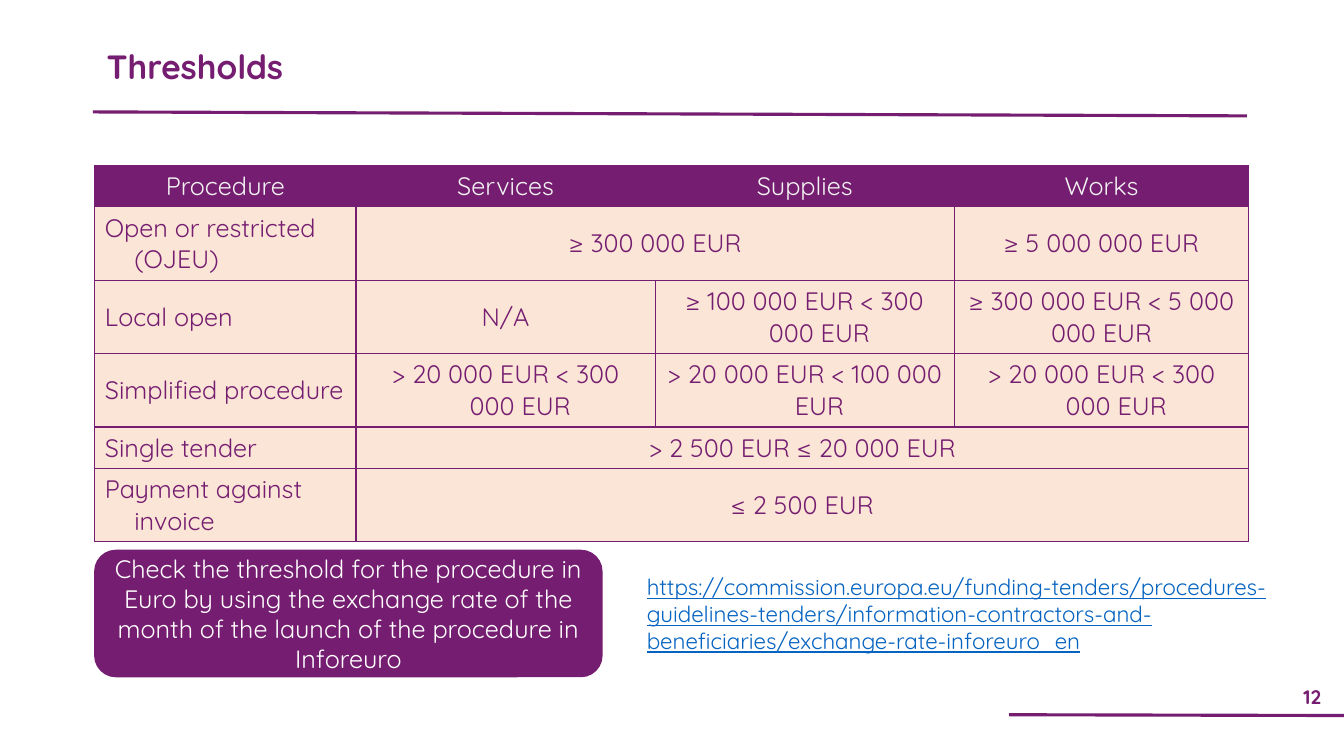
from dataclasses import dataclass

from lxml.etree import SubElement
from pptx import Presentation
from pptx.dml.color import RGBColor as RGB
from pptx.enum.shapes import MSO_CONNECTOR as Connector, MSO_SHAPE as Shape
from pptx.enum.text import MSO_ANCHOR as Anchor, PP_ALIGN as Align
from pptx.oxml.ns import qn
from pptx.util import Cm, Pt


@dataclass(frozen=True)
class Theme:
    font: str = "Quicksand"
    purple: RGB = RGB(0x75, 0x1D, 0x70)
    peach: RGB = RGB(0xFB, 0xE5, 0xD6)
    pale: RGB = RGB(0xF2, 0xF2, 0xF2)
    white: RGB = RGB(0xFF, 0xFF, 0xFF)
    link: RGB = RGB(0x05, 0x63, 0xC1)
    title: int = 24
    body: int = 18
    address: int = 16
    number: int = 14


THEME = Theme()
HANG = 0.74  # hanging indent, cm
SERVICES, SUPPLIES, WORKS = 1, 2, 3

HEADINGS = ["Procedure", "Services", "Supplies", "Works"]
# Procedure, row height, then (first column, last column, threshold, hanging)
PROCEDURES = [
    ("Open or restricted (OJEU)", 1.85, [
        (SERVICES, SUPPLIES, "≥ 300 000 EUR", True),
        (WORKS, WORKS, "≥ 5 000 000 EUR", False)]),
    ("Local open", 1.85, [
        (SERVICES, SERVICES, "N/A", True),
        (SUPPLIES, SUPPLIES, "≥ 100 000 EUR < 300 000 EUR", True),
        (WORKS, WORKS, "≥ 300 000 EUR < 5 000 000 EUR", False)]),
    ("Simplified procedure", 1.85, [
        (SERVICES, SERVICES, "> 20 000 EUR < 300 000 EUR", True),
        (SUPPLIES, SUPPLIES, "> 20 000 EUR < 100 000 EUR", True),
        (WORKS, WORKS, "> 20 000 EUR < 300 000 EUR", True)]),
    ("Single tender", 1.04, [
        (SERVICES, WORKS, "> 2 500 EUR ≤ 20 000 EUR", True)]),
    ("Payment against invoice", 1.85, [
        (SERVICES, WORKS, "≤ 2 500 EUR", True)]),
]
RATE_NOTE = ("Check the threshold for the procedure in Euro by using the exchange rate "
             "of the month of the launch of the procedure in Inforeuro")
RATE_ADDRESS = ("https://commission.europa.eu/funding-tenders/procedures-guidelines-tenders/"
                "information-contractors-and-beneficiaries/exchange-rate-inforeuro_en")


def write(frame, text, size, color, align=Align.LEFT, bold=False, hanging=False):
    frame.word_wrap = True
    paragraph = frame.paragraphs[0]
    paragraph.text = text
    paragraph.alignment = align
    if hanging:
        properties = paragraph._p.get_or_add_pPr()
        properties.set("marL", str(Cm(HANG)))
        properties.set("indent", str(-Cm(HANG)))
    font = paragraph.font
    font.name, font.size, font.bold = THEME.font, Pt(size), bold
    font.color.rgb = color
    return paragraph


def add_text(slide, box, *args, anchor=Anchor.TOP, **kwargs):
    frame = slide.shapes.add_textbox(*map(Cm, box)).text_frame
    frame.vertical_anchor = anchor
    return write(frame, *args, **kwargs)


def add_rule(slide, x1, y1, x2, y2):
    rule = slide.shapes.add_connector(Connector.STRAIGHT, *map(Cm, (x1, y1, x2, y2)))
    rule.line.color.rgb = THEME.purple
    rule.line.width = Pt(2.25)
    SubElement(rule._element.spPr, qn("a:effectLst"))


def style_cell(cell, fill):
    # Borders go in before the fill, as the schema orders them
    properties = cell._tc.get_or_add_tcPr()
    for side in ("a:lnL", "a:lnR", "a:lnT", "a:lnB"):
        border = SubElement(properties, qn(side), w=str(Pt(1)))
        color = SubElement(border, qn("a:solidFill"))
        SubElement(color, qn("a:srgbClr"), val=str(THEME.purple))
    cell.fill.solid()
    cell.fill.fore_color.rgb = fill


def add_header(slide, left, top, width):
    title = add_text(slide, (left + 0.1, top, 24.7, 1.07), "Thresholds",
                     THEME.title, THEME.purple, Align.JUSTIFY, bold=True)
    title.line_spacing = 0.8
    add_rule(slide, left, top + 1.6, left + width, top + 1.7)


def add_thresholds(slide, left, top, widths):
    heights = [1.04] + [height for _, height, _ in PROCEDURES]
    table = slide.shapes.add_table(
        len(heights), len(widths), *map(Cm, (left, top, sum(widths), sum(heights)))).table
    table.first_row = table.horz_banding = False
    for column, width in zip(table.columns, widths):
        column.width = Cm(width)
    for index, (row, height) in enumerate(zip(table.rows, heights)):
        row.height = Cm(height)
        for cell in row.cells:
            style_cell(cell, THEME.peach if index else THEME.purple)
            cell.vertical_anchor = Anchor.MIDDLE if index else Anchor.TOP

    for column, heading in enumerate(HEADINGS):
        write(table.cell(0, column).text_frame, heading, THEME.body, THEME.pale, Align.CENTER)
    for row, (procedure, _, thresholds) in enumerate(PROCEDURES, start=1):
        write(table.cell(row, 0).text_frame, procedure, THEME.body, THEME.purple, hanging=True)
        for first, last, threshold, hanging in thresholds:
            cell = table.cell(row, first)
            if last > first:
                cell.merge(table.cell(row, last))
            write(cell.text_frame, threshold, THEME.body, THEME.purple,
                  Align.CENTER, hanging=hanging)


def add_exchange_rate(slide, left, top):
    # Note in a rounded box, with the address beside it
    note = slide.shapes.add_shape(Shape.ROUNDED_RECTANGLE, *map(Cm, (left, top, 12.78, 3.18)))
    note.shadow.inherit = False
    note.fill.solid()
    note.fill.fore_color.rgb = note.line.color.rgb = THEME.purple
    note.line.width = Pt(1)
    note.text_frame.vertical_anchor = Anchor.MIDDLE
    write(note.text_frame, RATE_NOTE, THEME.body, THEME.white, Align.CENTER)
    address = add_text(slide, (left + 13.66, top + 0.46, 17, 2.31), RATE_ADDRESS,
                       THEME.address, THEME.link)
    address.font.underline = True


def add_footer(slide, right, bottom):
    add_text(slide, (right - 1.6, bottom - 1.95, 1.6, 0.91), "12", THEME.number,
             THEME.purple, Align.CENTER, bold=True, anchor=Anchor.MIDDLE)
    add_rule(slide, right - 8.44, bottom - 1.04, right, bottom - 1.02)


def main():
    deck = Presentation()
    deck.slide_width, deck.slide_height = Cm(33.87), Cm(19.05)
    slide = deck.slides.add_slide(deck.slide_layouts[6])
    add_header(slide, left=2.34, top=1.22, width=29.08)
    add_thresholds(slide, left=2.39, top=4.17, widths=[6.58, 7.54, 7.54, 7.42])
    add_exchange_rate(slide, left=2.39, top=13.87)
    add_footer(slide, right=33.87, bottom=19.05)
    deck.save("out.pptx")


if __name__ == "__main__":
    main()
